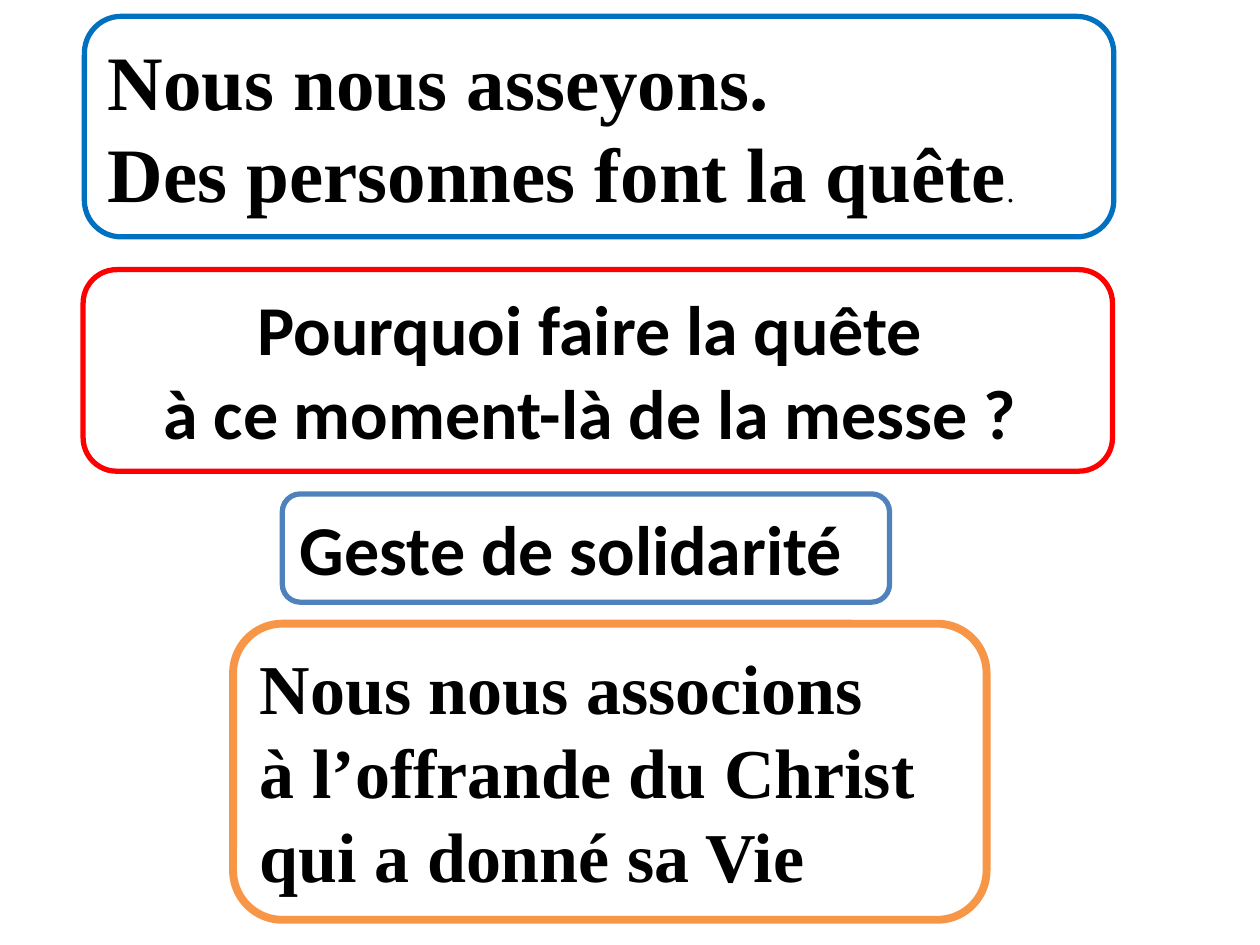
import pptx
import pptx.dml.color
import pptx.enum.shapes
import pptx.enum.text
import pptx.util
from pptx.util import Inches

SERIF = "Times New Roman"
SANS = "Calibri"


def rgb(value):
    return pptx.dml.color.RGBColor.from_string(value)


def add_run(p, text, font, size, bold=True):
    r = p.add_run()
    r.text = text
    r.font.name = font
    r.font.size = pptx.util.Pt(size)
    r.font.bold = bold
    r.font.color.rgb = rgb("000000")


def add_box(slide, left, top, width, height, color, weight, fill=None):
    """Add an outlined rounded box and return its text frame."""
    sp = slide.shapes.add_shape(
        pptx.enum.shapes.MSO_SHAPE.ROUNDED_RECTANGLE,
        Inches(left), Inches(top), Inches(width), Inches(height))
    sp.shadow.inherit = False
    if fill:
        sp.fill.solid()
        sp.fill.fore_color.rgb = rgb(fill)
    else:
        sp.fill.background()
    sp.line.color.rgb = rgb(color)
    sp.line.width = pptx.util.Pt(weight)
    tf = sp.text_frame
    tf.word_wrap = True
    tf.auto_size = pptx.enum.text.MSO_AUTO_SIZE.SHAPE_TO_FIT_TEXT
    tf.vertical_anchor = pptx.enum.text.MSO_ANCHOR.TOP
    return tf


def add_lines(tf, lines, font, size):
    """Write one left-aligned paragraph per line and return the last one."""
    for i, line in enumerate(lines):
        p = tf.add_paragraph() if i else tf.paragraphs[0]
        p.alignment = pptx.enum.text.PP_ALIGN.LEFT
        add_run(p, line, font, size)
    return p


def main():
    prs = pptx.Presentation()
    prs.slide_width, prs.slide_height = Inches(10), Inches(7.5)
    slide = prs.slides.add_slide(prs.slide_layouts[6])

    offering = add_box(slide, 1.85, 4.95, 5.98, 2.35, "F79646", 4.5, "FFFFFF")
    add_lines(offering, ["Nous nous associons", "à l’offrande du Christ",
                         "qui a donné sa Vie"], SERIF, 40)

    collection = add_box(slide, 0.67, 0.13, 8.17, 1.75, "0070C0", 3)
    p = add_lines(collection, ["Nous nous asseyons.",
                               "Des personnes font la quête"], SERIF, 44)
    add_run(p, ".", SERIF, 18, bold=False)

    question = add_box(slide, 0.66, 2.14, 8.17, 1.6, "FF0000", 3)
    p = question.paragraphs[0]
    p.alignment = pptx.enum.text.PP_ALIGN.CENTER
    add_run(p, "Pourquoi faire la quête ", SANS, 40)
    p.add_line_break()
    add_run(p, "à ce moment-là de la messe ? ", SANS, 40)

    solidarity = add_box(slide, 2.24, 3.92, 4.82, 0.86, "4F81BD", 3)
    add_lines(solidarity, ["Geste de solidarité"], SANS, 40)

    prs.save("out.pptx")


if __name__ == "__main__":
    main()
